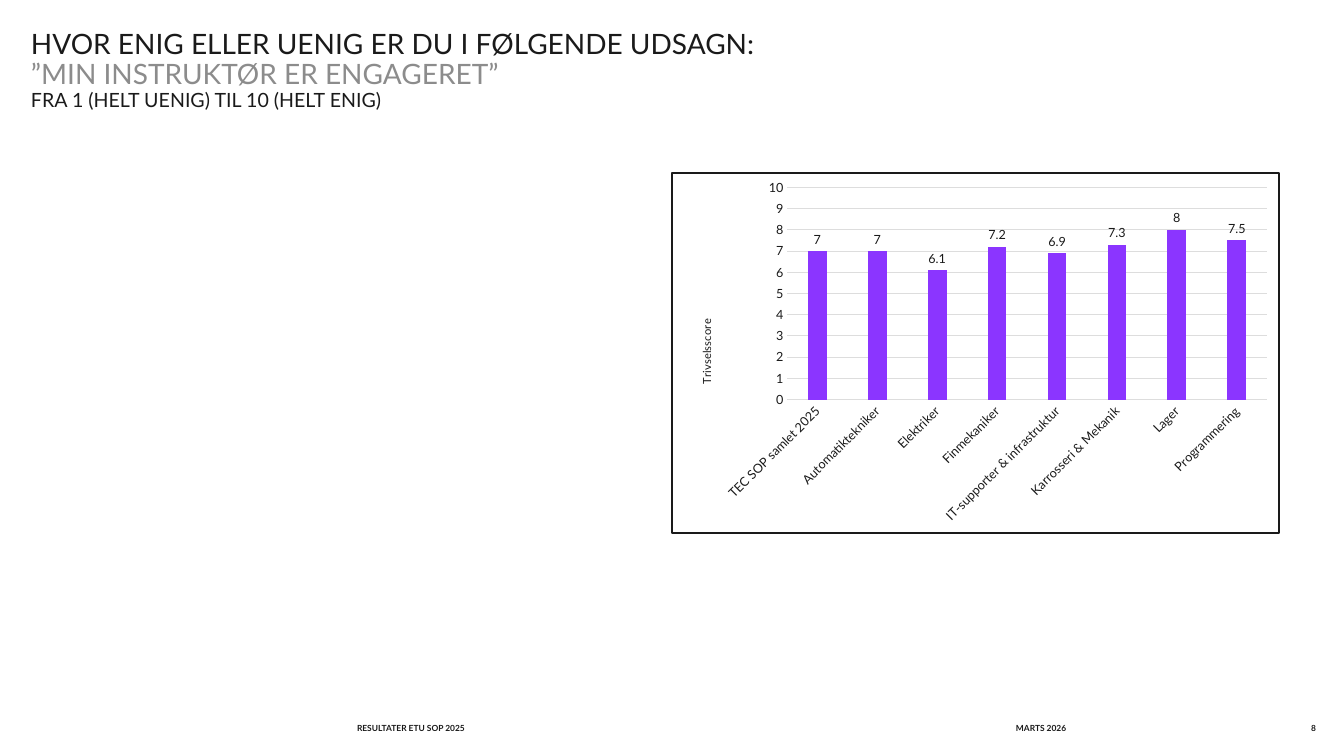
"""Build the survey slide on engaged instructors, with one column chart."""
from pptx import Presentation, util as u
from pptx.chart.data import CategoryChartData
from pptx.dml.color import RGBColor
from pptx.enum import chart as ch, text as t
from pptx.oxml import parse_xml
from pptx.oxml.ns import qn

FACE, INK, GREY, GRID, VIOLET = "Lato", "1A1A1A", "8C8C8C", "DDDDDD", "8B35FF"
NS = ('xmlns:c="http://schemas.openxmlformats.org/drawingml/2006/chart" '
      'xmlns:a="http://schemas.openxmlformats.org/drawingml/2006/main"')


def px(*nums):
    return [u.Emu(round(n * 914400 / 100.8)) for n in nums]


def style(font, size, color=INK, bold=False):
    font.name, font.size, font.bold = FACE, u.Pt(size), bold
    font.color.rgb = RGBColor.from_string(color)


prs = Presentation()
prs.slide_width, prs.slide_height = px(1344, 756)
slide = prs.slides.add_slide(prs.slide_layouts[6])

head = [("HVOR ENIG ELLER UENIG ER DU I FØLGENDE UDSAGN:", 20, INK),
        ("”MIN INSTRUKTØR ER ENGAGERET”", 20, GREY),
        ("FRA 1 (HELT UENIG) TIL 10 (HELT ENIG)", 14, INK)]
left, mid, right = t.PP_ALIGN.LEFT, t.MSO_ANCHOR.MIDDLE, t.PP_ALIGN.RIGHT
boxes = [((1016, 721, 150, 15), [("MARTS 2026", 6, INK)], left, mid),
         ((357, 721, 445, 15), [("RESULTATER ETU SOP 2025", 6, INK)], left, mid),
         ((1246, 721, 70, 15), [("8", 6, INK)], right, mid),
         ((31, 30, 1285, 118), head, left, t.MSO_ANCHOR.TOP)]
for place, lines, align, anchor in boxes:
    frame = slide.shapes.add_textbox(*px(*place)).text_frame
    frame.word_wrap, frame.vertical_anchor = True, anchor
    frame.margin_left = frame.margin_right = 0
    frame.margin_top = frame.margin_bottom = 0
    for i, (words, size, color) in enumerate(lines):
        para = frame.add_paragraph() if i else frame.paragraphs[0]
        para.alignment = align
        if lines is head:
            para.line_spacing = 0.9
        run = para.add_run()
        run.text = words
        style(run.font, size, color, lines is not head)

data = CategoryChartData()
data.categories = ["TEC SOP samlet 2025", "Automatiktekniker", "Elektriker",
                   "Finmekaniker", "IT-supporter & infrastruktur",
                   "Karrosseri & Mekanik", "Lager", "Programmering"]
data.add_series("Trivselsscore", [7, 7, 6.1, 7.2, 6.9, 7.3, 8, 7.5])
chart = slide.shapes.add_chart(ch.XL_CHART_TYPE.COLUMN_CLUSTERED,
                               *px(671, 172, 609, 362), data).chart
chart.has_legend = chart.has_title = False
style(chart.font, 10)
plot = chart.plots[0]
plot.gap_width, plot.overlap, plot.vary_by_categories = 219, -27, False
bars = plot.series[0].format.fill
bars.solid()
bars.fore_color.rgb = RGBColor.from_string(VIOLET)
plot.has_data_labels = True
tags = plot.data_labels
tags.show_value, tags.position = True, ch.XL_LABEL_POSITION.OUTSIDE_END
style(tags.font, 9)

cat, val = chart.category_axis, chart.value_axis
for axis in (cat, val):
    axis.major_tick_mark = axis.minor_tick_mark = ch.XL_TICK_MARK.NONE
    style(axis.tick_labels.font, 9)
val.minimum_scale, val.maximum_scale, val.major_unit = 0, 10, 1
val.has_major_gridlines = True
val.format.line.fill.background()
for line in (cat.format.line, val.major_gridlines.format.line):
    line.color.rgb, line.width = RGBColor.from_string(GRID), u.Pt(0.75)
cat._element.find(qn("c:txPr")).find(qn("a:bodyPr")).set("rot", "-2700000")
name = val.axis_title.text_frame
name.text = "Trivselsscore"
style(name.paragraphs[0].runs[0].font, 8)
title = val._element.find(qn("c:title"))
body = title.find(".//" + qn("a:bodyPr"))
body.set("rot", "-5400000")
body.set("vert", "horz")

area = chart.element.find(".//" + qn("c:plotArea"))
inner = dict(layoutTarget="inner", xMode="edge", yMode="edge", x=0.19, y=0.04, w=0.79, h=0.59)
spot = dict(xMode="edge", yMode="edge", x=0.04, y=0.4)
for owner, index, parts in ((area, 0, inner), (title, 1, spot)):
    for old in owner.findall(qn("c:layout")):
        owner.remove(old)
    marks = "".join(f'<c:{key} val="{value}"/>' for key, value in parts.items())
    owner.insert(index, parse_xml(
        f"<c:layout {NS}><c:manualLayout>{marks}</c:manualLayout></c:layout>"))
chart.element.find(qn("c:chart")).addnext(parse_xml(
    f'<c:spPr {NS}><a:solidFill><a:srgbClr val="FFFFFF"/></a:solidFill>'
    f'<a:ln w="19050"><a:solidFill><a:srgbClr val="{INK}"/></a:solidFill></a:ln></c:spPr>'))

prs.save("out.pptx")
